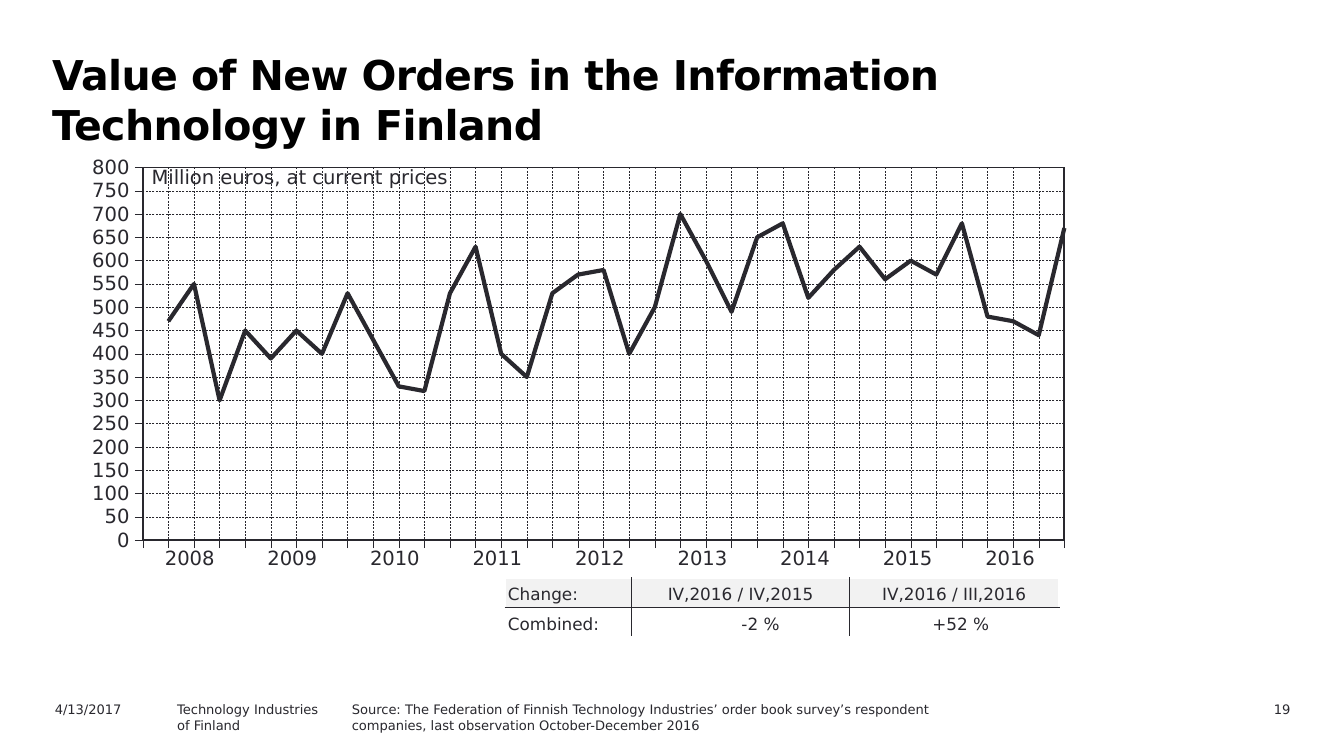
from lxml.etree import SubElement
from pptx import Presentation
from pptx.chart.data import CategoryChartData
from pptx.dml.color import RGBColor
from pptx.enum.chart import XL_CHART_TYPE, XL_MARKER_STYLE, XL_TICK_LABEL_POSITION, XL_TICK_MARK
from pptx.enum.dml import MSO_LINE
from pptx.enum.text import MSO_ANCHOR, PP_ALIGN
from pptx.oxml import parse_xml
from pptx.oxml.ns import nsdecls, qn
from pptx.util import Inches, Pt

WIDTH = Inches(10)
HEIGHT = WIDTH * 9 // 16
COLUMN, ROW = WIDTH / 100, HEIGHT / 56.25  # fine square grid over the slide
COLORS = {"title": "000000", "ink": "29282E", "header": "F2F2F2", "paper": "FFFFFF"}
FONT = "DejaVu Sans"
NO_STYLE = "{2D5ABB26-0587-4C30-8999-92F81FD0307C}"

YEARS = range(2008, 2017)
ORDERS = [None, 470, 550, 300, 450, 390, 450, 400, 530, 430, 330, 320, 530,
          630, 400, 350, 530, 570, 580, 400, 500, 700, 600, 490, 650,
          680, 520, 580, 630, 560, 600, 570, 680, 480, 470, 440, 670]
CHANGES = [["Change:", "IV,2016 / IV,2015", "IV,2016 / III,2016"],
           ["Combined:", "-2 %", "+52 %"]]


def color(name):
    return RGBColor.from_string(COLORS[name])


def place(left, top, width, height):
    """Turn grid columns and rows into lengths."""
    return [round(length) for length in
            (left * COLUMN, top * ROW, width * COLUMN, height * ROW)]


def style(font, size, name="ink", bold=False):
    font.name, font.size, font.bold = FONT, Pt(size), bold
    font.color.rgb = color(name)


def add_text(slide, box, lines, size, align=PP_ALIGN.LEFT, wrap=True):
    frame = slide.shapes.add_textbox(*place(*box)).text_frame
    frame.word_wrap = wrap
    frame.text = "\n".join(lines)
    for paragraph in frame.paragraphs:
        paragraph.alignment = align
        style(paragraph.font, size)
    return frame


def add_plain_table(slide, box, rows, columns):
    shape = slide.shapes.add_table(rows, columns, *place(*box))
    table = shape.table
    table.first_row = table.horz_banding = False
    shape.element.find(".//" + qn("a:tableStyleId")).text = NO_STYLE
    return table


def add_title(slide, box):
    frame = add_text(slide, box, ["Value of New Orders in the Information Technology in Finland"], 22)
    paragraph = frame.paragraphs[0]
    paragraph.line_spacing = Pt(27)
    style(paragraph.font, 22, "title", bold=True)
    paragraph.runs[0].font._element.set("spc", "-30")


def style_axis(axis):
    axis.has_major_gridlines = True
    axis.major_tick_mark = XL_TICK_MARK.OUTSIDE
    axis.minor_tick_mark = XL_TICK_MARK.NONE
    for line in (axis.format.line, axis.major_gridlines.format.line):
        line.color.rgb = color("ink")
        line.width = Pt(0.25)
    axis.major_gridlines.format.line.dash_style = MSO_LINE.DASH


def add_chart(slide, box):
    data = CategoryChartData()
    data.categories = [str(quarter + 1) for quarter in range(len(ORDERS))]
    data.add_series("Series 1", ORDERS)
    chart = slide.shapes.add_chart(XL_CHART_TYPE.LINE, *place(*box), data).chart
    chart.has_legend = chart.has_title = False
    style(chart.font, 10.5)

    # Axes
    style_axis(chart.category_axis)
    chart.category_axis.tick_label_position = XL_TICK_LABEL_POSITION.NONE
    values = chart.value_axis
    style_axis(values)
    values.minimum_scale, values.maximum_scale, values.major_unit = 0, 800, 50
    values.tick_labels.number_format = "#,##0"
    values.tick_labels.number_format_is_linked = False
    style(values.tick_labels.font, 10.5)

    # Line
    chart.plots[0].vary_by_categories = False
    series = chart.plots[0].series[0]
    series.smooth = False
    series.marker.style = XL_MARKER_STYLE.NONE
    series.format.line.color.rgb = color("ink")
    series.format.line.width = Pt(2.25)

    # Points on the tick marks, fixed plot area with a frame
    axis = values._element
    for old in axis.findall(qn("c:crossBetween")):
        axis.remove(old)
    axis.find(qn("c:crosses")).addnext(
        parse_xml(f'<c:crossBetween {nsdecls("c")} val="midCat"/>'))
    area = chart._chartSpace.find(".//" + qn("c:plotArea"))
    for old in area.findall(qn("c:layout")):
        area.remove(old)
    layout = parse_xml(f'<c:layout {nsdecls("c")}/>')
    manual = SubElement(layout, qn("c:manualLayout"))
    for tag, value in (("layoutTarget", "inner"), ("xMode", "edge"), ("yMode", "edge"),
                       ("x", "0.082"), ("y", "0.041"), ("w", "0.747"), ("h", "0.833")):
        SubElement(manual, qn("c:" + tag)).set("val", value)
    area.insert(0, layout)
    area.append(parse_xml(
        f'<c:spPr {nsdecls("c", "a")}><a:noFill/><a:ln w="12700"><a:solidFill>'
        f'<a:srgbClr val="{COLORS["ink"]}"/></a:solidFill></a:ln></c:spPr>'))


def add_orders(slide, box):
    """Chart with its row of years and its unit label."""
    left, top, width, height = box
    add_chart(slide, box)
    years = add_plain_table(slide, (left + 7.2, top + 29.1, 68.7, 3.1), 1, len(YEARS))
    for cell, year in zip(years.rows[0].cells, YEARS):
        cell.text = str(year)
        cell.fill.background()
        paragraph = cell.text_frame.paragraphs[0]
        paragraph.alignment = PP_ALIGN.CENTER
        style(paragraph.font, 10.5)
    add_text(slide, (left + 7.2, top + 0.7, 24.4, 2.7),
             ["Million euros, at current prices"], 10.5, wrap=False)


def set_borders(cell, **sides):
    properties = cell._tc.get_or_add_tcPr()
    for index, side in enumerate(("L", "R", "T", "B")):
        properties.insert(index, parse_xml(
            f'<a:ln{side} {nsdecls("a")} w="12700"><a:solidFill>'
            f'<a:srgbClr val="{COLORS[sides[side]]}"/></a:solidFill></a:ln{side}>'))


def add_changes(slide, box):
    table = add_plain_table(slide, box, 2, 3)
    for column, share in zip(table.columns, (9.4, 16.2, 15.6)):
        column.width = round(share * COLUMN)
    for r, texts in enumerate(CHANGES):
        for c, text in enumerate(texts):
            cell = table.cell(r, c)
            cell.text = text
            cell.vertical_anchor = MSO_ANCHOR.BOTTOM
            cell.margin_left = cell.margin_right = Inches(0.02)
            cell.margin_top = cell.margin_bottom = Inches(0.02)
            paragraph = cell.text_frame.paragraphs[0]
            if c and r:
                cell.margin_right = Inches(0.52)
                paragraph.alignment = PP_ALIGN.RIGHT
            elif c:
                paragraph.alignment = PP_ALIGN.CENTER
            style(paragraph.font, 9)
            cell.fill.solid()
            cell.fill.fore_color.rgb = color("paper" if r else "header")
            # Only inner borders are dark
            set_borders(cell, L="ink" if c else "paper", R="ink" if c < 2 else "paper",
                        T="ink" if r else "paper", B="paper" if r else "ink")


def add_footer(slide, box):
    left, top, width, height = box
    parts = [
        (0, 10, ["4/13/2017"], PP_ALIGN.LEFT),
        (9.1, 17.3, ["Technology Industries", "of Finland"], PP_ALIGN.LEFT),
        (22.1, 50.7, ["Source: The Federation of Finnish Technology Industries’ order book "
                      "survey’s respondent companies, last observation October-December 2016"],
         PP_ALIGN.LEFT),
        (width - 9.4, 9.4, ["19"], PP_ALIGN.RIGHT),
    ]
    for offset, part_width, lines, align in parts:
        add_text(slide, (left + offset, top, part_width, height), lines, 7, align)


def main():
    presentation = Presentation()
    presentation.slide_width, presentation.slide_height = WIDTH, HEIGHT
    slide = presentation.slides.add_slide(presentation.slide_layouts[6])
    add_title(slide, (2.9, 3.1, 87.4, 7.1))
    add_orders(slide, (3.1, 11.1, 91.8, 33.3))
    add_changes(slide, (37.6, 43, 41.2, 4.4))
    add_footer(slide, (3.1, 51.7, 93.9, 1.8))
    presentation.save("out.pptx")


if __name__ == "__main__":
    main()
